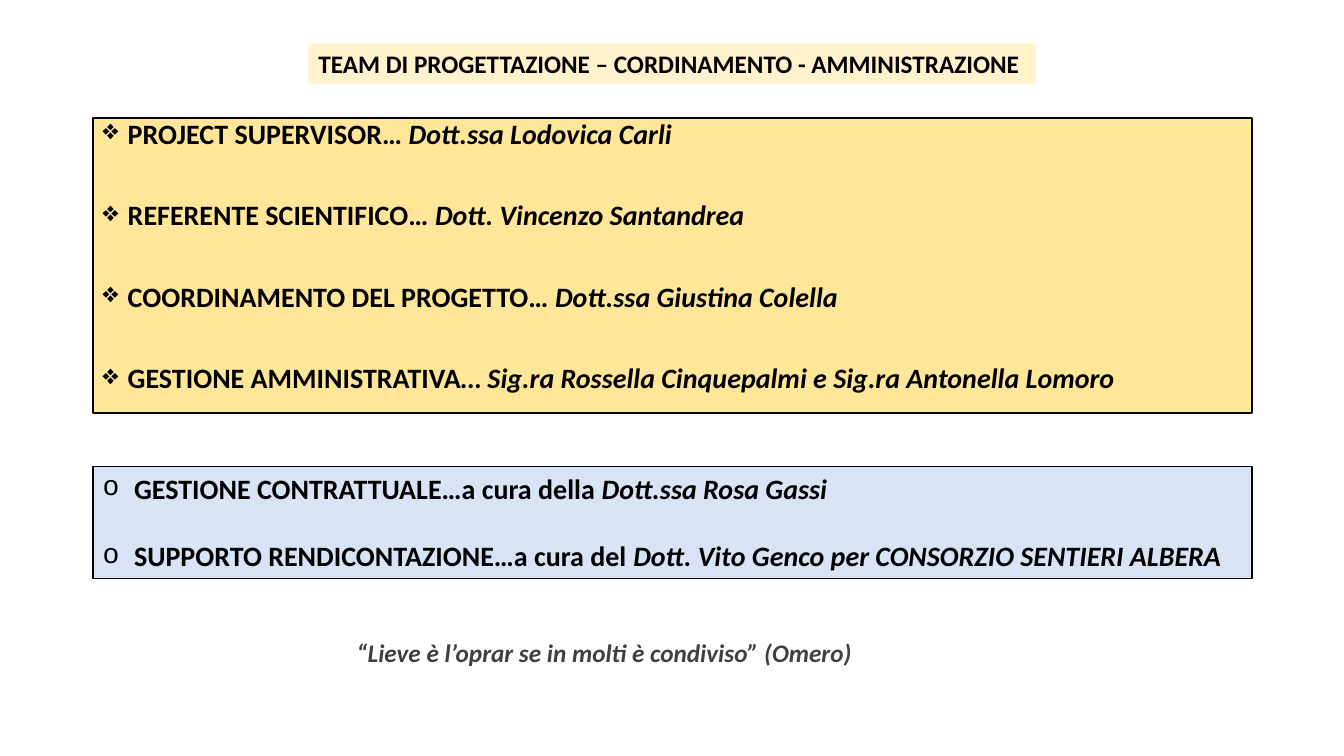
from lxml import etree
from pptx import Presentation
from pptx.dml.color import RGBColor
from pptx.enum import shapes, text
from pptx.oxml import ns
from pptx.util import Cm, Pt

TITLE = "TEAM DI PROGETTAZIONE – CORDINAMENTO - AMMINISTRAZIONE"
TEAM = [
    ("PROJECT SUPERVISOR… ", "Dott.ssa Lodovica Carli"),
    ("REFERENTE SCIENTIFICO… ", "Dott. Vincenzo Santandrea"),
    ("COORDINAMENTO DEL PROGETTO… ", "Dott.ssa Giustina Colella"),
    ("GESTIONE AMMINISTRATIVA", "… Sig.ra Rossella Cinquepalmi e Sig.ra Antonella Lomoro"),
]
SUPPORT = [
    ("GESTIONE CONTRATTUALE…a cura della ", "Dott.ssa Rosa Gassi"),
    ("SUPPORTO RENDICONTAZIONE…a cura del ", "Dott. Vito Genco per CONSORZIO SENTIERI ALBERA"),
]
QUOTE = "“Lieve è l’oprar se in molti è condiviso” (Omero)"

FONT = "Calibri"
BLACK = RGBColor(0x00, 0x00, 0x00)
GREY = RGBColor(0x40, 0x40, 0x40)
CREAM = RGBColor(0xFF, 0xF2, 0xCC)
YELLOW = RGBColor(0xFF, 0xE6, 0x99)
BLUE = RGBColor(0xDA, 0xE3, 0xF3)
LEFT, WIDTH = Cm(2.34), Cm(29.21)


def add_run(p, content, size=20, color=BLACK, italic=False):
    p.alignment = text.PP_ALIGN.LEFT
    r = p.add_run()
    r.text = content
    f = r.font
    f.name, f.size, f.bold, f.italic = FONT, Pt(size), True, italic
    f.color.rgb = color


def add_bullet(p, char, indent, font=None):
    pPr = p._p.get_or_add_pPr()
    pPr.set("marL", str(indent))
    pPr.set("indent", str(-indent))
    if font:
        etree.SubElement(pPr, ns.qn("a:buFont")).set("typeface", font)
    etree.SubElement(pPr, ns.qn("a:buChar")).set("char", char)


def add_panel(s, top, height, fill, rows, bullet, gap, line_spacing=1.0):
    sp = s.shapes.add_shape(shapes.MSO_SHAPE.RECTANGLE, LEFT, top, WIDTH, height)
    sp.shadow.inherit = False
    sp.fill.solid()
    sp.fill.fore_color.rgb = fill
    sp.line.color.rgb = BLACK
    sp.line.width = Pt(1)
    tf = sp.text_frame
    tf.word_wrap = True
    tf.vertical_anchor = text.MSO_ANCHOR.TOP
    for i, (role, person) in enumerate(rows):
        p = tf.paragraphs[0] if i == 0 else tf.add_paragraph()
        p.line_spacing = line_spacing
        p.space_before = Pt(gap if i else 0)
        add_bullet(p, *bullet)
        add_run(p, role)
        add_run(p, person, italic=True)


prs = Presentation()
prs.slide_width, prs.slide_height = Cm(33.87), Cm(19.05)
s = prs.slides.add_slide(prs.slide_layouts[5])

title = s.shapes.title
title.left, title.top, title.width, title.height = Cm(7.77), Cm(1.09), Cm(18.34), Cm(1.02)
title.fill.solid()
title.fill.fore_color.rgb = CREAM
title.text_frame.word_wrap = False
title.text_frame.auto_size = text.MSO_AUTO_SIZE.NONE
add_run(title.text_frame.paragraphs[0], TITLE, size=18)

add_panel(s, Cm(2.97), Cm(7.44), YELLOW, TEAM, ("❖", Cm(0.63)), gap=39, line_spacing=0.8)
add_panel(s, Cm(11.76), Cm(2.82), BLUE, SUPPORT, ("o", Cm(0.79), "Courier New"), gap=24)

quote = s.shapes.add_textbox(Cm(8.74), Cm(15.93), Cm(16.41), Cm(1.02))
quote.text_frame.word_wrap = True
add_run(quote.text_frame.paragraphs[0], QUOTE, size=18, color=GREY, italic=True)

prs.save("out.pptx")
